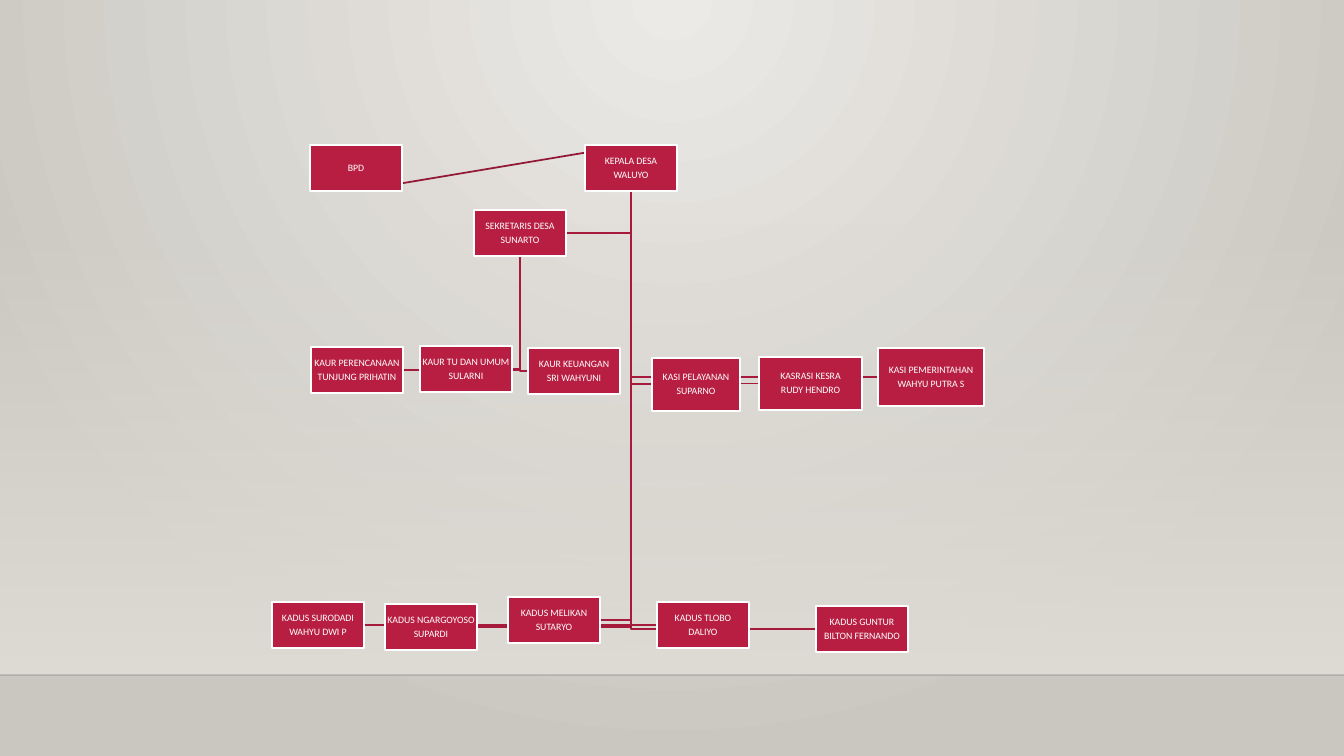
from dataclasses import dataclass

from lxml import etree
from pptx import Presentation
from pptx import util as u
from pptx.dml.color import RGBColor
from pptx.enum import shapes, text
from pptx.oxml.ns import qn

# Content: key -> (lines, left, top, width, height) in px
SIZE = (92, 46)
POSTS = {
    "bpd": (["BPD"], 310, 145, *SIZE),
    "kepala": (["KEPALA DESA", "WALUYO"], 585, 145, *SIZE),
    "sekretaris": (["SEKRETARIS DESA", "SUNARTO"], 474, 210, *SIZE),
    "perencanaan": (["KAUR PERENCANAAN", "TUNJUNG PRIHATIN"], 311, 347, *SIZE),
    "keuangan": (["KAUR KEUANGAN", "SRI WAHYUNI"], 528, 348, *SIZE),
    "umum": (["KAUR TU DAN UMUM", "SULARNI"], 420, 346, *SIZE),
    "pelayanan": (["KASI PELAYANAN", "SUPARNO"], 652, 358, 88, 53),
    "kesra": (["KASRASI KESRA", "RUDY HENDRO"], 759, 357, 103, 53),
    "pemerintahan": (["KASI PEMERINTAHAN", "WAHYU PUTRA S"], 878, 348, 106, 58),
    "guntur": (["KADUS GUNTUR", "BILTON FERNANDO"], 816, 606, *SIZE),
    "surodadi": (["KADUS SURODADI", "WAHYU DWI P"], 272, 602, *SIZE),
    "ngargoyoso": (["KADUS NGARGOYOSO", "SUPARDI"], 385, 604, *SIZE),
    "tlobo": (["KADUS TLOBO", "DALIYO"], 657, 602, *SIZE),
    "melikan": (["KADUS MELIKAN", "SUTARYO"], 508, 597, *SIZE),
}
REPORTS = {
    "kepala": ["melikan", "tlobo", "ngargoyoso", "surodadi", "guntur",
               "pemerintahan", "kesra", "pelayanan", "sekretaris"],
    "sekretaris": ["umum", "keuangan", "perencanaan"],
}
SLIDE_W, SLIDE_H = 1344, 756
WALL_TOP, FLOOR = 223, 675


@dataclass(frozen=True)
class Theme:
    font: str = "Calibri"
    size: float = 7
    space_after: float = 2.45
    stroke: float = 1.25
    ink: str = "FFFFFF"
    box: str = "B71E42"
    branch: str = "A61B3C"
    link: str = "931835"
    light: str = "ECEAE7"
    dark: str = "CAC7C1"
    wall: str = "DFDBD5"
    floor_line: str = "000001"


THEME = Theme()


def px(value):
    return round(value * 914400 / 100.8)


def color(code):
    return RGBColor.from_string(code)


def set_gradient(fill, first, last):
    fill.gradient()
    for stop, code in zip(fill.gradient_stops, (first, last)):
        stop.color.rgb = color(code)


def set_alpha(element, percent):
    rgb = element.find(".//" + qn("a:srgbClr"))
    etree.SubElement(rgb, qn("a:alpha"), val=str(percent * 1000))


def set_line(shape, code, width):
    shape.line.color.rgb = color(code)
    shape.line.width = u.Pt(width)


def add_line(slide, start, end, code, width):
    line = slide.shapes.add_connector(
        shapes.MSO_CONNECTOR.STRAIGHT, *map(px, (*start, *end)))
    set_line(line, code, width)
    etree.SubElement(line._element.spPr, qn("a:effectLst"))
    return line


def add_rectangle(slide, left, top, width, height):
    box = slide.shapes.add_shape(
        shapes.MSO_SHAPE.RECTANGLE, *map(px, (left, top, width, height)))
    box.shadow.inherit = False
    return box


def add_backdrop(slide):
    set_gradient(slide.background.fill, THEME.light, THEME.dark)
    linear = slide._element.find(".//" + qn("a:lin"))
    circle = etree.Element(qn("a:path"), path="circle")
    etree.SubElement(circle, qn("a:fillToRect"),
                     l="43000", t="0", r="43000", b="100000")
    linear.getparent().replace(linear, circle)

    wall = add_rectangle(slide, 0, WALL_TOP, SLIDE_W, FLOOR - WALL_TOP)
    set_gradient(wall.fill, THEME.wall, THEME.wall)
    wall.fill.gradient_angle = 270
    set_alpha(wall._element, 0)
    wall.line.fill.background()

    floor = add_line(slide, (0, FLOOR), (SLIDE_W, FLOOR), THEME.floor_line, 1)
    set_alpha(floor._element, 20)


def top_middle(name):
    _, left, top, width, _ = POSTS[name]
    return left + width / 2, top


def bottom_middle(name):
    x, top = top_middle(name)
    return x, top + POSTS[name][4]


def add_branch(slide, parent, child):
    trunk, start = bottom_middle(parent)
    _, left, top, width, height = POSTS[child]
    near_side = left if left > trunk else left + width
    level = top + height / 2
    builder = slide.shapes.build_freeform(px(trunk), px(start))
    builder.add_line_segments(
        [(px(trunk), px(level)), (px(near_side), px(level))], close=False)
    branch = builder.convert_to_shape()
    branch.shadow.inherit = False
    branch.fill.background()
    set_line(branch, THEME.branch, THEME.stroke)


def add_post(slide, lines, left, top, width, height):
    box = add_rectangle(slide, left, top, width, height)
    box.fill.solid()
    box.fill.fore_color.rgb = color(THEME.box)
    set_line(box, THEME.ink, THEME.stroke)
    frame = box.text_frame
    frame.margin_left = frame.margin_right = 0
    frame.margin_top = frame.margin_bottom = 0
    frame.vertical_anchor = text.MSO_ANCHOR.MIDDLE
    frame.word_wrap = True
    frame.text = "\n".join(lines)
    for para in frame.paragraphs:
        para.alignment = text.PP_ALIGN.CENTER
        para.line_spacing = 0.9
        para.space_after = u.Pt(THEME.space_after)
        for span in para.runs:
            span.font.name = THEME.font
            span.font.size = u.Pt(THEME.size)
            span.font.color.rgb = color(THEME.ink)
    return box


def main():
    deck = Presentation()
    deck.slide_width, deck.slide_height = px(SLIDE_W), px(SLIDE_H)
    page = deck.slides.add_slide(deck.slide_layouts[6])
    add_backdrop(page)

    # Lines lie behind the boxes
    for parent, children in REPORTS.items():
        for child in children:
            add_branch(page, parent, child)
    link = add_line(page, bottom_middle("bpd"), top_middle("kepala"),
                    THEME.link, THEME.stroke)

    # Boxes, then the joined link
    boxes = {name: add_post(page, *post) for name, post in POSTS.items()}
    link.begin_connect(boxes["bpd"], 2)
    link.end_connect(boxes["kepala"], 0)
    deck.save("out.pptx")


if __name__ == "__main__":
    main()
